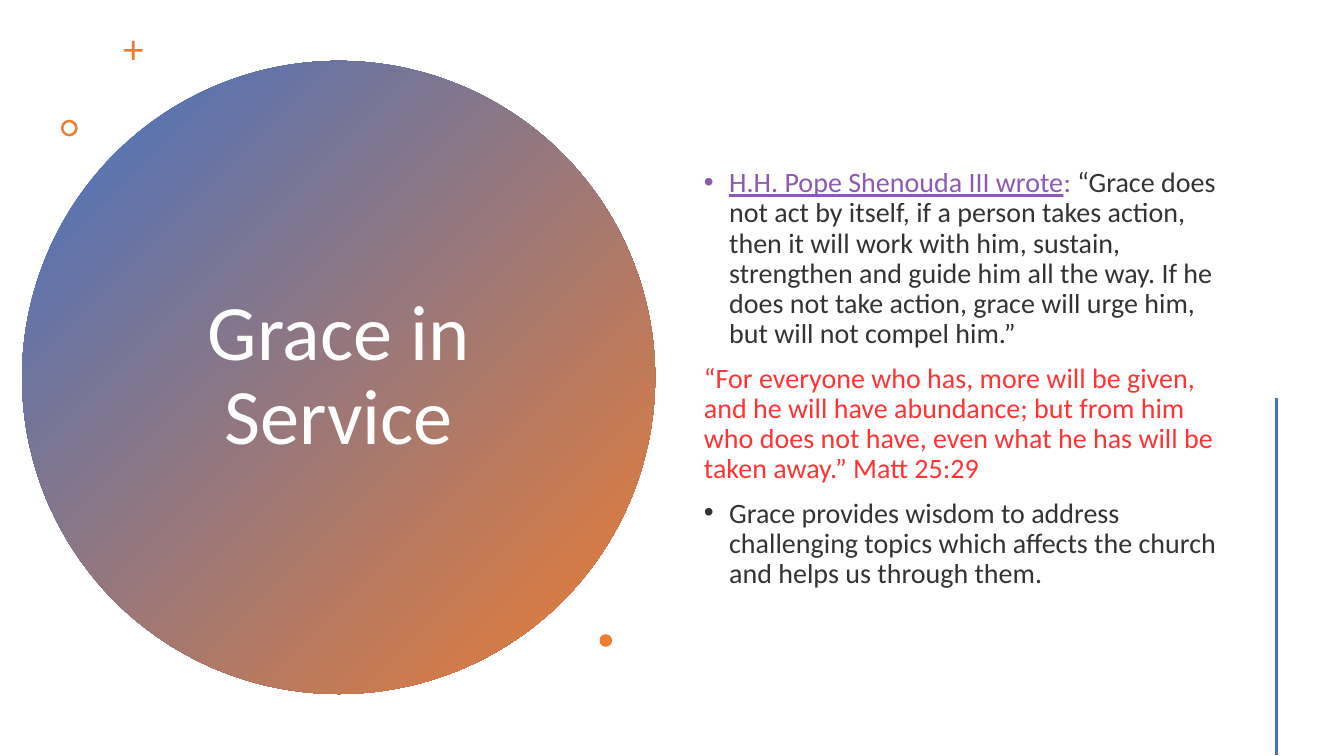
from dataclasses import dataclass

from lxml.etree import SubElement as Sub
from pptx import Presentation
from pptx.dml.color import RGBColor as Rgb
from pptx.enum.shapes import MSO_CONNECTOR as Conn, MSO_SHAPE as Kind
from pptx.enum.text import MSO_ANCHOR as Anchor, PP_ALIGN as Align
from pptx.oxml.ns import qn
from pptx.util import Pt

SCALE = 9525  # EMU in one px, 96 px to the inch


@dataclass(frozen=True)
class Theme:
    font: str = "Calibri"
    title: int = 56
    body: int = 20
    blue: str = "4472C4"
    orange: str = "ED7D31"
    white: str = "FFFFFF"
    black: str = "000000"
    purple: str = "7030A0"
    red: str = "FF0000"
    alpha: int = 80


THEME = Theme()


def px(*vals):
    return [val * SCALE for val in vals]


def put(obj, **vals):
    """Set each format value as an attribute of obj."""
    for key, val in vals.items():
        setattr(obj, key, val)


def add_mark(slide, kind, box, color, ratio=None):
    """Add a plain filled shape; ratio is its first adjustment."""
    mark = slide.shapes.add_shape(kind, *px(*box))
    mark.shadow.inherit = False
    mark.line.fill.background()
    mark.fill.solid()
    mark.fill.fore_color.rgb = Rgb.from_string(color)
    if ratio is not None:
        mark.adjustments[0] = ratio
    return mark


def blend(shape, colors, angle):
    shape.fill.gradient()
    shape.fill.gradient_angle = angle
    for stop, color in zip(shape.fill.gradient_stops, colors):
        stop.color.rgb = Rgb.from_string(color)


def add_box(slide, box):
    frame = slide.shapes.add_textbox(*px(*box)).text_frame
    put(frame, word_wrap=True, vertical_anchor=Anchor.MIDDLE)
    return frame


def add_run(para, text, color, size, alpha=100, line=False):
    run = para.add_run()
    run.text = text
    put(run.font, name=THEME.font, size=Pt(size), underline=line)
    run.font.color.rgb = Rgb.from_string(color)
    if alpha < 100:
        tint = run.font.fill._xPr.find(qn("a:solidFill"))[0]
        Sub(tint, qn("a:alpha"), val=str(alpha * 1000))


def add_dot(para):
    """Give the paragraph a hanging bullet."""
    props = para._p.get_or_add_pPr()
    indent = px(24)[0]
    props.set("marL", str(indent))
    props.set("indent", str(-indent))
    Sub(props, qn("a:buFont"), typeface="Arial")
    Sub(props, qn("a:buChar"), char="•")


def add_title(slide, text, box):
    para = add_box(slide, box).paragraphs[0]
    put(para, alignment=Align.CENTER, line_spacing=0.9)
    add_run(para, text, THEME.white, THEME.title)


def add_body(slide, items, box):
    """Each item is a bullet flag and a list of (text, color, underline)."""
    frame = add_box(slide, box)
    for num, (dot, runs) in enumerate(items):
        para = frame.add_paragraph() if num else frame.paragraphs[0]
        put(para, line_spacing=0.9, space_before=Pt(10))
        if dot:
            add_dot(para)
        for text, color, line in runs:
            add_run(para, text, color, THEME.body, THEME.alpha, line)


def add_rule(slide, ends, color, width):
    rule = slide.shapes.add_connector(Conn.STRAIGHT, *px(*ends))
    rule.line.color.rgb = Rgb.from_string(color)
    rule.line.width = Pt(width)
    Sub(rule._element.spPr, qn("a:effectLst"))


def main():
    deck = Presentation()
    wide, high = px(1280, 720)
    put(deck, slide_width=wide, slide_height=high)
    slide = deck.slides.add_slide(deck.slide_layouts[6])

    disc = add_mark(slide, Kind.OVAL, (21, 58, 603, 603), THEME.blue)
    blend(disc, (THEME.blue, THEME.orange), 315)
    add_title(slide, "Grace in Service", (131, 135, 383, 448))

    for kind, box, ratio in (
        (Kind.CROSS, (118, 39, 18, 18), 0.43),
        (Kind.DONUT, (58, 114, 16, 16), 0.15),
        (Kind.OVAL, (571, 604, 12, 12), None),
    ):
        add_mark(slide, kind, box, THEME.orange, ratio)

    quote = (
        "“Grace does not act by itself, if a person takes action, then it "
        "will work with him, sustain, strengthen and guide him all the way. "
        "If he does not take action, grace will urge him, but will not "
        "compel him.”"
    )
    verse = (
        "“For everyone who has, more will be given, and he will have "
        "abundance; but from him who does not have, even what he has will "
        "be taken away.” Matt 25:29"
    )
    point = (
        "Grace provides wisdom to address challenging topics which affects "
        "the church and helps us through them."
    )
    items = [
        (True, [
            ("H.H. Pope Shenouda III wrote", THEME.purple, True),
            (": ", THEME.purple, False),
            (quote, THEME.black, False),
        ]),
        (False, [(verse, THEME.red, False)]),
        (True, [(point, THEME.black, False)]),
    ]
    add_body(slide, items, (661, 55, 525, 612))
    add_rule(slide, (1216, 379, 1216, 719), THEME.blue, 2)
    deck.save("out.pptx")


if __name__ == "__main__":
    main()
